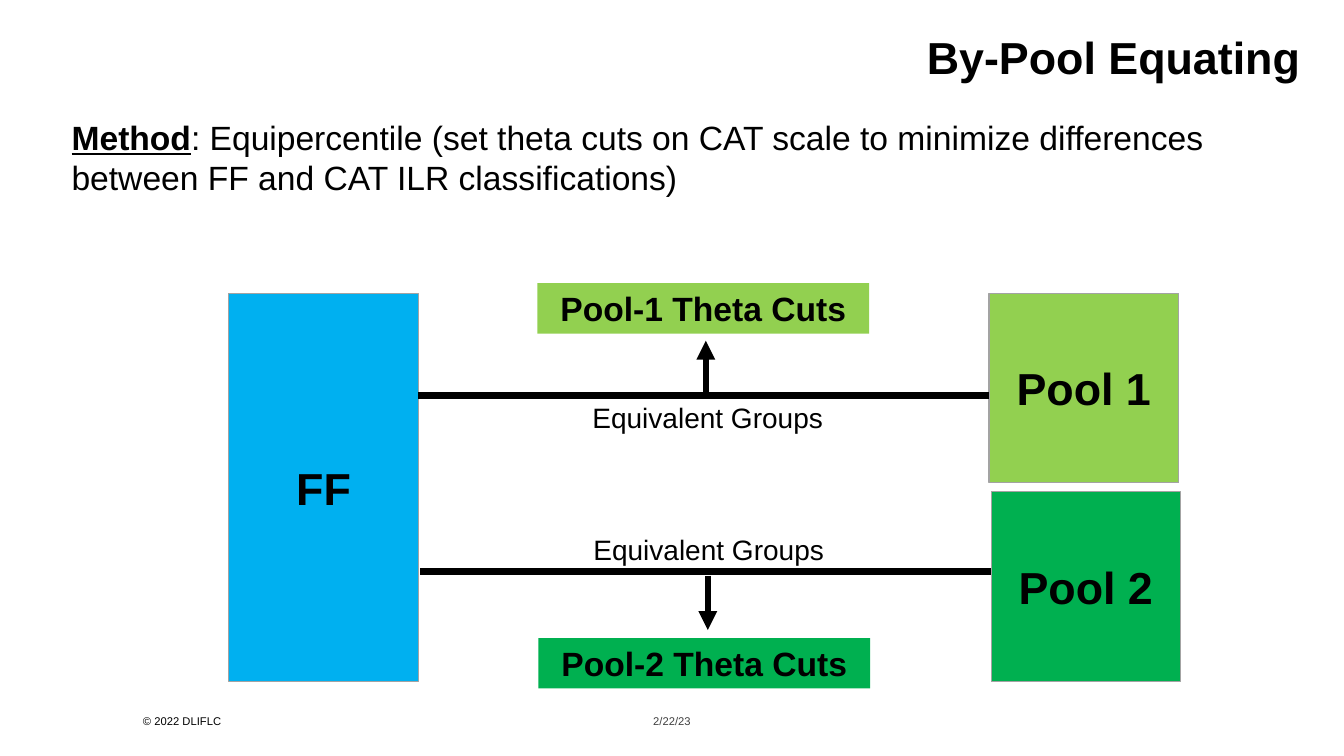
from dataclasses import dataclass, field
from typing import Any

from lxml import etree
from pptx import Presentation
from pptx import util as u
from pptx.dml.color import RGBColor
from pptx.enum import shapes, text
from pptx.oxml.ns import qn


@dataclass(frozen=True)
class Theme:
    font: str = "Arial"
    black: str = "000000"
    gray: str = "404040"
    outline: str = "A3A3A3"
    blue: str = "00B0F0"
    lime: str = "92D050"
    green: str = "00B050"
    heading: int = 32
    body: int = 24
    label: int = 20
    footer: int = 8
    outline_width: float = 0.85
    link_width: float = 5
    arrow_width: float = 4.5


THEME = Theme()
LEFT, CENTER, RIGHT = text.PP_ALIGN.LEFT, text.PP_ALIGN.CENTER, text.PP_ALIGN.RIGHT
TOP, MIDDLE, BOTTOM = text.MSO_ANCHOR.TOP, text.MSO_ANCHOR.MIDDLE, text.MSO_ANCHOR.BOTTOM


@dataclass(frozen=True)
class Run:
    words: str
    size: int
    color: str = THEME.black
    style: dict[str, Any] = field(default_factory=dict)


@dataclass(frozen=True)
class Block:
    box: tuple[float, float, float, float]
    runs: list[Run]
    align: Any = CENTER
    anchor: Any = MIDDLE
    fill: str | None = None
    outlined: bool = False
    spacing: float = 1.0


@dataclass(frozen=True)
class Link:
    start: tuple[float, float]
    end: tuple[float, float]
    width: float
    arrow: bool = False


def apply(target: Any, values: dict[str, Any]) -> None:
    for name, value in values.items():
        setattr(target, name, value)


def place(shape: Any, box: tuple[float, float, float, float]) -> None:
    apply(shape, dict(zip(("left", "top", "width", "height"), map(u.Inches, box))))


def write(shape: Any, block: Block) -> None:
    frame = shape.text_frame
    apply(frame, {"word_wrap": True, "auto_size": text.MSO_AUTO_SIZE.NONE,
                  "vertical_anchor": block.anchor})
    paragraph = frame.paragraphs[0]
    apply(paragraph, {"alignment": block.align, "line_spacing": block.spacing,
                      "space_before": u.Pt(0)})
    for part in block.runs:
        run = paragraph.add_run()
        run.text = part.words
        apply(run.font, {"name": THEME.font, "size": u.Pt(part.size), **part.style})
        run.font.color.rgb = RGBColor.from_string(part.color)


def draw_block(slide: Any, block: Block) -> None:
    box = map(u.Inches, block.box)
    if block.fill is None:
        shape = slide.shapes.add_textbox(*box)
    else:
        shape = slide.shapes.add_shape(shapes.MSO_SHAPE.RECTANGLE, *box)
        shape.shadow.inherit = False
        shape.fill.solid()
        shape.fill.fore_color.rgb = RGBColor.from_string(block.fill)
        if block.outlined:
            shape.line.color.rgb = RGBColor.from_string(THEME.outline)
            shape.line.width = u.Pt(THEME.outline_width)
        else:
            shape.line.fill.background()
    write(shape, block)


def draw_link(slide: Any, link: Link) -> None:
    connector = slide.shapes.add_connector(
        shapes.MSO_CONNECTOR.STRAIGHT, *map(u.Inches, link.start + link.end))
    connector.line.color.rgb = RGBColor.from_string(THEME.black)
    connector.line.width = u.Pt(link.width)
    properties = connector._element.spPr
    if link.arrow:
        etree.SubElement(properties.find(qn("a:ln")), qn("a:tailEnd"), type="triangle")
    etree.SubElement(properties, qn("a:effectLst"))


def fill_placeholders(slide: Any) -> None:
    title, method = slide.shapes.title, slide.placeholders[1]
    heading = Block((2.33, 0.25, 10.67, 0.63),
                    [Run("By-Pool Equating", THEME.heading, style={"bold": True})],
                    RIGHT, BOTTOM)
    description = Block((0.61, 1, 12.46, 1.01), [
        Run("Method", THEME.body, style={"bold": True, "underline": True}),
        Run(": Equipercentile (set theta cuts on CAT scale to minimize differences "
            "between FF and CAT ILR classifications)", THEME.body),
    ], LEFT, BOTTOM)
    for shape, block in ((title, heading), (method, description)):
        place(shape, block.box)
        write(shape, block)
    bullet = method.text_frame.paragraphs[0]._p.get_or_add_pPr()
    bullet.set("marL", "0")
    bullet.set("indent", "0")
    etree.SubElement(bullet, qn("a:buNone"))


def form_box(name: str, box: tuple[float, float, float, float], fill: str) -> Block:
    return Block(box, [Run(name, THEME.heading, style={"bold": True})],
                 fill=fill, outlined=True)


@dataclass(frozen=True)
class Pool:
    number: int
    color: str
    shift: float
    pool_top: float
    cuts_left: float
    cuts_top: float
    groups_left: float
    groups_top: float
    link_y: float
    arrow_y: tuple[float, float]


POOLS = [
    Pool(1, THEME.lime, 0, 2.91, 5.33, 2.81, 5.47, 3.92, 3.92, (3.92, 3.38)),
    Pool(2, THEME.green, 0.02, 4.88, 5.34, 6.33, 5.48, 5.23, 5.67, (5.71, 6.25)),
]


def draw_pool(slide: Any, pool: Pool) -> None:
    pool_left, arrow_x = 9.81 + pool.shift, 7 + pool.shift
    draw_block(slide, form_box(f"Pool {pool.number}",
                               (pool_left, pool.pool_top, 1.88, 1.88), pool.color))
    draw_block(slide, Block(
        (pool.cuts_left, pool.cuts_top, 3.29, 0.5),
        [Run(f"Pool-{pool.number} Theta Cuts", THEME.body, style={"bold": True})],
        anchor=TOP, fill=pool.color))
    draw_link(slide, Link((4.15 + pool.shift, pool.link_y), (pool_left, pool.link_y),
                          THEME.link_width))
    arrow_start, arrow_end = pool.arrow_y
    draw_link(slide, Link((arrow_x, arrow_start), (arrow_x, arrow_end),
                          THEME.arrow_width, arrow=True))
    draw_block(slide, Block((pool.groups_left, pool.groups_top, 3.1, 0.44),
                            [Run("Equivalent Groups", THEME.label)],
                            anchor=BOTTOM, spacing=0.9))


def main() -> None:
    deck = Presentation()
    apply(deck, {"slide_width": u.Inches(13.33), "slide_height": u.Inches(7.5)})
    slide = deck.slides.add_slide(deck.slide_layouts[1])
    fill_placeholders(slide)
    draw_block(slide, form_box("FF", (2.27, 2.91, 1.88, 3.85), THEME.blue))
    for pool in POOLS:
        draw_pool(slide, pool)
    draw_block(slide, Block((5.9, 7.05, 1.53, 0.2),
                            [Run("2/22/23", THEME.footer, THEME.gray)]))
    draw_block(slide, Block((1.32, 7.05, 4.43, 0.2),
                            [Run("© 2022 DLIFLC", THEME.footer)], LEFT))
    deck.save("out.pptx")


if __name__ == "__main__":
    main()
